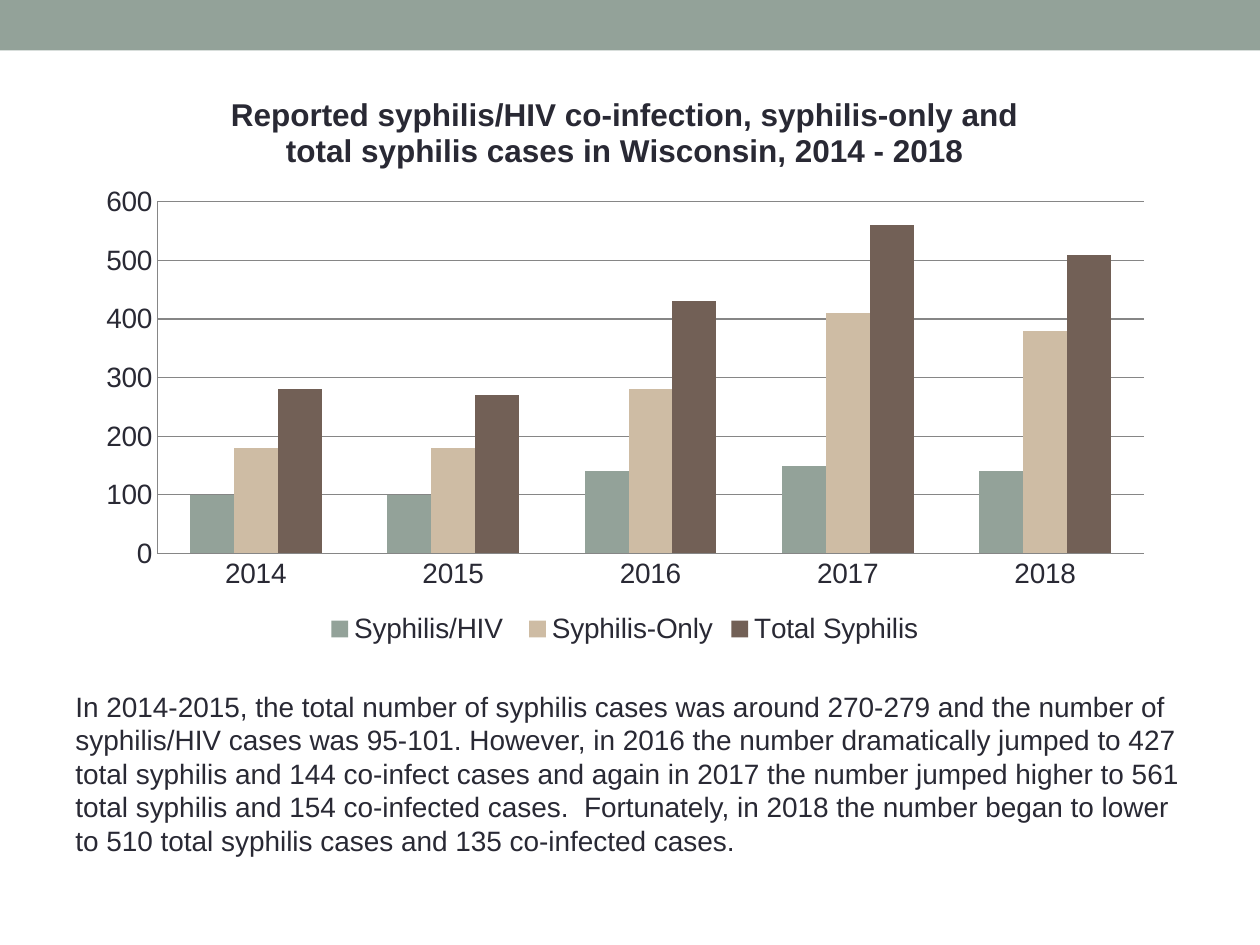
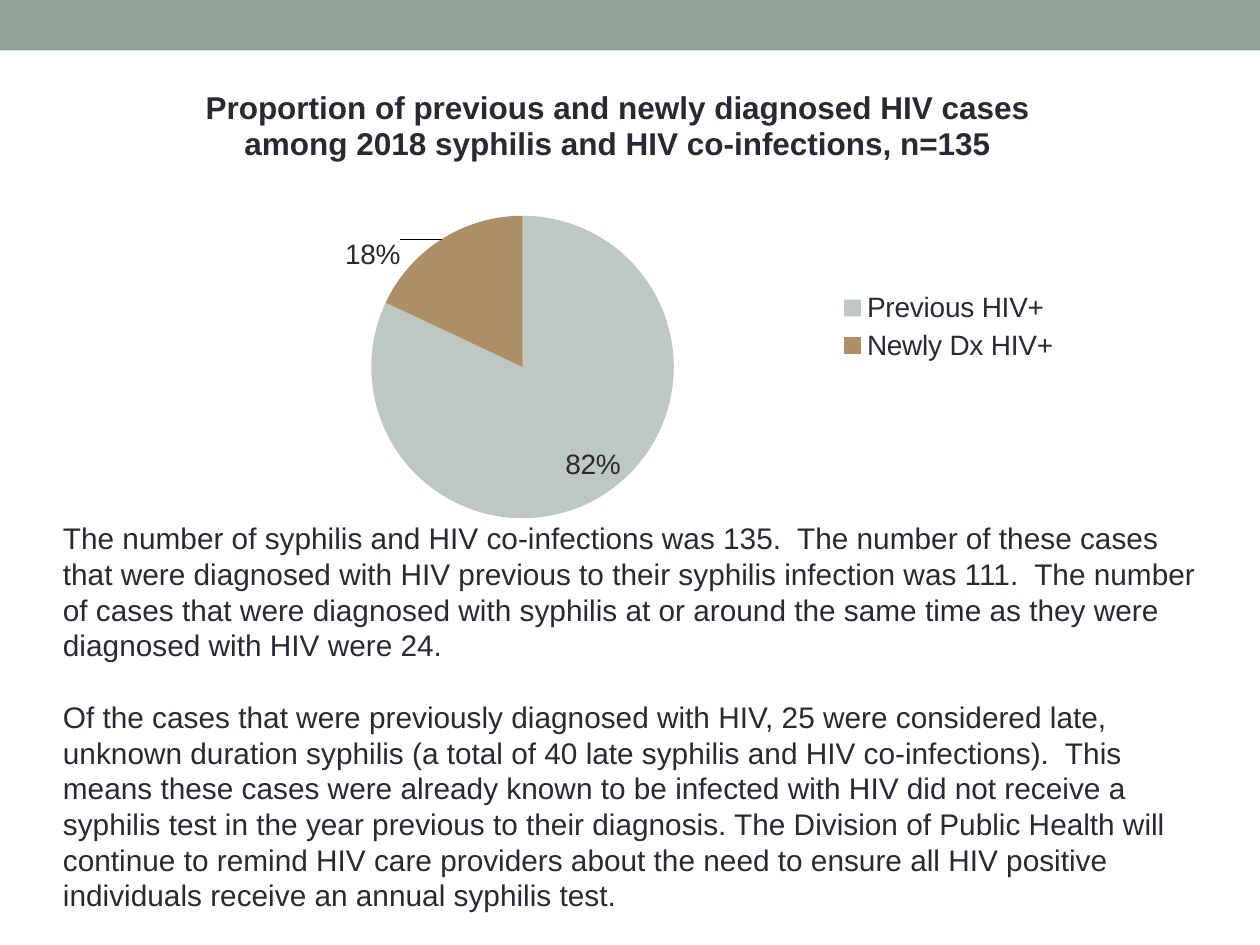
from dataclasses import dataclass
from typing import Optional

from lxml import etree
from pptx import Presentation
from pptx.chart.chart import Chart
from pptx.chart.data import CategoryChartData
from pptx.dml.color import RGBColor
from pptx.enum.chart import (XL_CHART_TYPE, XL_LABEL_POSITION,
                             XL_LEGEND_POSITION, XL_TICK_MARK)
from pptx.enum.shapes import MSO_SHAPE
from pptx.oxml.ns import qn
from pptx.slide import Slide
from pptx.util import Cm, Pt

COLUMN, PIE = XL_CHART_TYPE.COLUMN_CLUSTERED, XL_CHART_TYPE.PIE
BOTTOM, RIGHT = XL_LEGEND_POSITION.BOTTOM, XL_LEGEND_POSITION.RIGHT
INSIDE_END = XL_LABEL_POSITION.INSIDE_END
OUTSIDE_END = XL_LABEL_POSITION.OUTSIDE_END
NO_TICK = XL_TICK_MARK.NONE
RECTANGLE = MSO_SHAPE.RECTANGLE

INK = RGBColor(0x29, 0x29, 0x34)
SAGE = RGBColor(0x93, 0xA2, 0x99)
PALE_SAGE = RGBColor(0xBE, 0xC7, 0xC2)
SAND = RGBColor(0xCE, 0xBC, 0xA4)
BROWN = RGBColor(0x72, 0x60, 0x56)
TAN = RGBColor(0xAD, 0x8F, 0x67)
GRID_GRAY = RGBColor(0x86, 0x86, 0x86)

FONT = "Arial"
SLIDE_WIDTH, SLIDE_HEIGHT = Cm(25.4), Cm(19.05)
BAND_HEIGHT = Cm(1.02)
TITLE_SIZE, LABEL_SIZE = Pt(18), Pt(16)
PARAGRAPH_GAP = Pt(20.4)


@dataclass(frozen=True)
class Box:
    """A frame on the slide, in centimetres."""
    left: float
    top: float
    width: float
    height: float

    def lengths(self) -> tuple[Cm, Cm, Cm, Cm]:
        return Cm(self.left), Cm(self.top), Cm(self.width), Cm(self.height)


@dataclass(frozen=True)
class Layout:
    """Place or shift of a chart part, in centimetres within the chart."""
    x: float
    y: float
    w: Optional[float] = None
    h: Optional[float] = None


@dataclass(frozen=True)
class ChartSpec:
    kind: XL_CHART_TYPE
    box: Box
    title: str
    categories: tuple[str, ...]
    series: dict[str, tuple[int, ...]]
    legend: XL_LEGEND_POSITION
    title_layout: Layout
    plot_layout: Layout


@dataclass(frozen=True)
class Commentary:
    box: Box
    size: Pt
    paragraphs: tuple[str, ...]


CASES_CHART = ChartSpec(
    COLUMN, Box(1.7, 1.47, 21.79, 11.63),
    "Reported syphilis/HIV co-infection, syphilis-only and total syphilis "
    "cases in Wisconsin, 2014 - 2018",
    ("2014", "2015", "2016", "2017", "2018"),
    {"Syphilis/HIV ": (100, 100, 140, 150, 140),
     "Syphilis-Only": (180, 180, 280, 410, 380),
     "Total Syphilis": (280, 270, 430, 560, 510)},
    BOTTOM, Layout(2.84, 0.31), Layout(1.47, 2.6, 19.89, 7.09))
CASES_COLORS = (SAGE, SAND, BROWN)
CASES_TEXT = Commentary(Box(1.27, 13.77, 22.86, 4.24), Pt(16), (
    "In 2014-2015, the total number of syphilis cases was around 270-279 and "
    "the number of syphilis/HIV cases was 95-101. However, in 2016 the number "
    "dramatically jumped to 427 total syphilis and 144 co-infect cases and "
    "again in 2017 the number jumped higher to 561 total syphilis and 154 "
    "co-infected cases.  Fortunately, in 2018 the number began to lower to "
    "510 total syphilis cases and 135 co-infected cases.",))

DIAGNOSIS_CHART = ChartSpec(
    PIE, Box(1.27, 1.47, 22.86, 9.32),
    "Proportion of previous and newly diagnosed HIV cases among 2018 syphilis "
    "and HIV co-infections, n=135",
    ("Previous HIV+", "Newly Dx HIV+"),
    {"Series 1": (82, 18)},
    RIGHT, Layout(2.76, 0.17), Layout(6.18, 2.88, 6.17, 6.1))
DIAGNOSIS_COLORS = (PALE_SAGE, TAN)
DIAGNOSIS_LEGEND = Layout(15.57, 4.29, 4.57, 1.66)
DIAGNOSIS_LABELS = ((INSIDE_END, Layout(0.42, -0.18)),
                    (OUTSIDE_END, Layout(-0.75, 0.75)))
DIAGNOSIS_TEXT = Commentary(Box(1.02, 10.36, 23.5, 8.26), Pt(17), (
    "The number of syphilis and HIV co-infections was 135.  The number of "
    "these cases that were diagnosed with HIV previous to their syphilis "
    "infection was 111.  The number of cases that were diagnosed with "
    "syphilis at or around the same time as they were diagnosed with HIV "
    "were 24.",
    "Of the cases that were previously diagnosed with HIV, 25 were considered "
    "late, unknown duration syphilis (a total of 40 late syphilis and HIV "
    "co-infections).  This means these cases were already known to be "
    "infected with HIV did not receive a syphilis test in the year previous "
    "to their diagnosis. The Division of Public Health will continue to "
    "remind HIV care providers about the need to ensure all HIV positive "
    "individuals receive an annual syphilis test."))


def style_font(font, size: Pt, bold: bool = False) -> None:
    font.name, font.size, font.bold = FONT, size, bold
    font.color.rgb = INK


def set_layout(parent, index: int, layout: Layout, box: Box,
               shift: bool = False) -> None:
    """Fix a chart part at a place, or shift it from its default place."""
    for old in parent.findall(qn("c:layout")):
        parent.remove(old)
    element = etree.Element(qn("c:layout"))
    manual = etree.SubElement(element, qn("c:manualLayout"))
    if index == 0:
        etree.SubElement(manual, qn("c:layoutTarget")).set("val", "inner")
    if not shift:
        for mode in ("xMode", "yMode"):
            etree.SubElement(manual, qn(f"c:{mode}")).set("val", "edge")
    for name, extent in (("x", box.width), ("y", box.height),
                         ("w", box.width), ("h", box.height)):
        value = getattr(layout, name)
        if value is not None:
            part = etree.SubElement(manual, qn(f"c:{name}"))
            part.set("val", str(value / extent))
    parent.insert(index, element)


def add_banded_slide(prs: Presentation) -> Slide:
    s = prs.slides.add_slide(prs.slide_layouts[6])
    band = s.shapes.add_shape(RECTANGLE, 0, 0, SLIDE_WIDTH, BAND_HEIGHT)
    band.shadow.inherit = False
    band.fill.solid()
    band.fill.fore_color.rgb = SAGE
    band.line.fill.background()
    return s


def add_commentary(s: Slide, commentary: Commentary) -> None:
    tf = s.shapes.add_textbox(*commentary.box.lengths()).text_frame
    tf.word_wrap = True
    for i, text in enumerate(commentary.paragraphs):
        p = tf.add_paragraph() if i else tf.paragraphs[0]
        p.text = text
        if i:
            p.space_before = PARAGRAPH_GAP
        style_font(p.runs[0].font, commentary.size)


def add_titled_chart(s: Slide, spec: ChartSpec) -> Chart:
    data = CategoryChartData()
    data.categories = spec.categories
    for name, values in spec.series.items():
        data.add_series(name, values)
    chart = s.shapes.add_chart(spec.kind, *spec.box.lengths(), data).chart
    style_font(chart.font, LABEL_SIZE)

    tf = chart.chart_title.text_frame
    tf.text = spec.title
    style_font(tf.paragraphs[0].runs[0].font, TITLE_SIZE, bold=True)
    chart.chart_title.include_in_layout = False
    chart.has_legend = True
    chart.legend.position = spec.legend
    chart.legend.include_in_layout = False
    style_font(chart.legend.font, LABEL_SIZE)

    title = chart.element.xpath("c:chart/c:title")[0]
    plot_area = chart.element.xpath("c:chart/c:plotArea")[0]
    set_layout(title, 1, spec.title_layout, spec.box)
    set_layout(plot_area, 0, spec.plot_layout, spec.box)
    return chart


def fill_parts(parts, colors: tuple[RGBColor, ...]) -> None:
    for part, color in zip(parts, colors):
        part.format.fill.solid()
        part.format.fill.fore_color.rgb = color


def build_cases_slide(prs: Presentation) -> None:
    s = add_banded_slide(prs)
    add_commentary(s, CASES_TEXT)
    chart = add_titled_chart(s, CASES_CHART)
    plot = chart.plots[0]
    plot.gap_width, plot.overlap, plot.vary_by_categories = 150, 0, False
    fill_parts(plot.series, CASES_COLORS)
    for axis in (chart.category_axis, chart.value_axis):
        axis.major_tick_mark = axis.minor_tick_mark = NO_TICK
        axis.format.line.color.rgb = GRID_GRAY
        style_font(axis.tick_labels.font, LABEL_SIZE)
    axis = chart.value_axis
    axis.minimum_scale, axis.maximum_scale, axis.major_unit = 0, 600, 100
    axis.has_major_gridlines = True
    axis.major_gridlines.format.line.color.rgb = GRID_GRAY


def build_diagnosis_slide(prs: Presentation) -> None:
    s = add_banded_slide(prs)
    chart = add_titled_chart(s, DIAGNOSIS_CHART)
    box = DIAGNOSIS_CHART.box
    chart.plots[0].vary_by_categories = True
    legend = chart.element.xpath("c:chart/c:legend")[0]
    set_layout(legend, 1, DIAGNOSIS_LEGEND, box)
    series = chart.plots[0].series[0]
    fill_parts([series.points[i] for i in range(len(DIAGNOSIS_COLORS))],
               DIAGNOSIS_COLORS)

    labels = series.data_labels
    labels.show_percentage, labels.show_value = True, False
    labels.number_format, labels.number_format_is_linked = "0%", False
    style_font(labels.font, LABEL_SIZE)
    for i, (position, shift) in enumerate(DIAGNOSIS_LABELS):
        label = series.points[i].data_label
        label.position = position
        style_font(label.font, LABEL_SIZE)
        element = chart.element.xpath(".//c:dLbl")[i]
        element.find(qn("c:showVal")).set("val", "0")
        element.find(qn("c:showPercent")).set("val", "1")
        set_layout(element, 1, shift, box, shift=True)
    add_commentary(s, DIAGNOSIS_TEXT)


def main() -> None:
    prs = Presentation()
    prs.slide_width, prs.slide_height = SLIDE_WIDTH, SLIDE_HEIGHT
    build_cases_slide(prs)
    build_diagnosis_slide(prs)
    prs.save("out.pptx")


if __name__ == "__main__":
    main()
